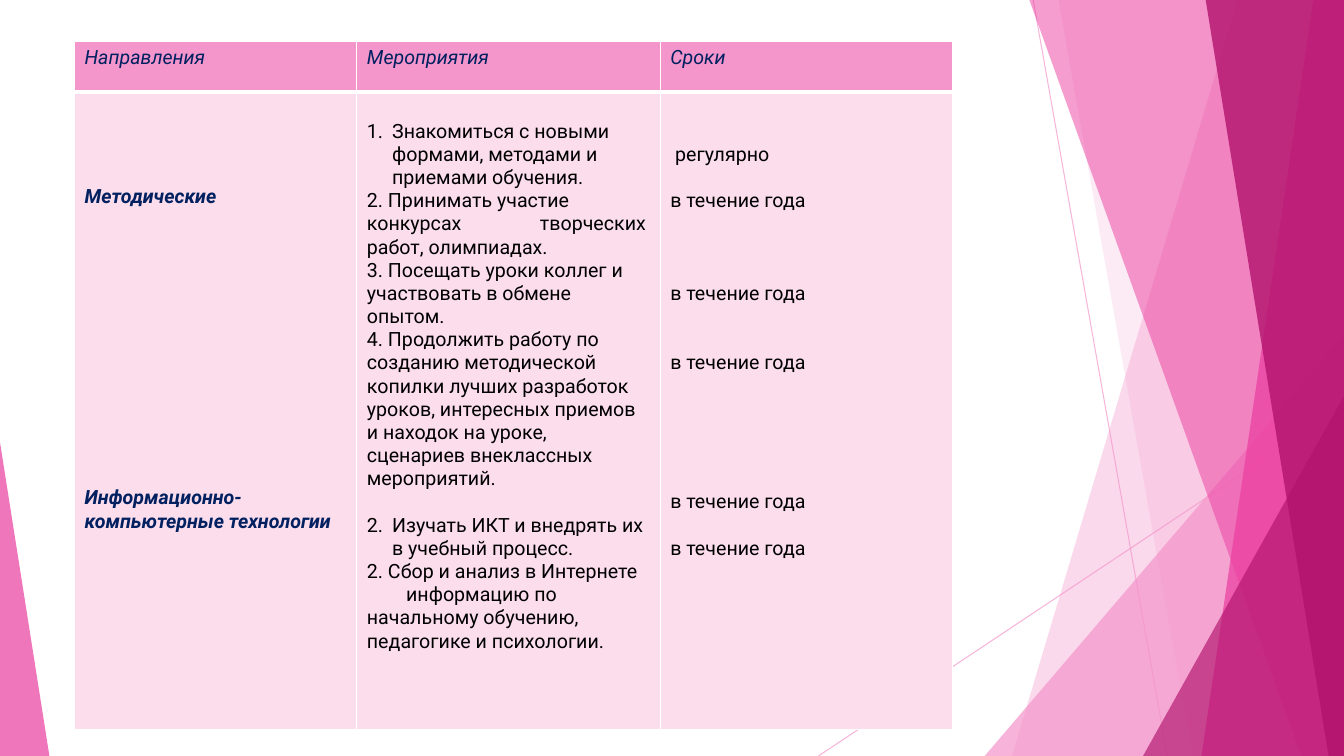
from lxml.etree import SubElement
from pptx import Presentation
from pptx.dml.color import RGBColor
from pptx.enum.shapes import MSO_CONNECTOR as Conn, MSO_SHAPE as Shape
from pptx.oxml.ns import qn
from pptx.util import Pt

WIDTH, HEIGHT = 960, 540
PALE, PINK, HOT, DEEP = "FBDDEC", "F496CB", "EB3D9F", "B2136D"
NAVY, BLACK, WHITE = "002060", "000000", "FFFFFF"
LINE = 16.55  # height of one text line
INSET = 3.6   # upper cell margin


def color(hex_code):
    return RGBColor.from_string(hex_code)


def set_alpha(element, percent):
    clr = element.find(".//" + qn("a:srgbClr"))
    SubElement(clr, qn("a:alpha"), val=str(percent * 1000))


class SlideBuilder:
    font = {"name": "Roboto", "size": Pt(14), "bold": False, "italic": False}

    def __init__(self, s):
        self.s = s

    def line(self, x1, y1, x2, y2):
        c = self.s.shapes.add_connector(
            Conn.STRAIGHT, Pt(x1), Pt(y1), Pt(x2), Pt(y2))
        c.line.width = Pt(0.75)
        c.line.color.rgb = color(PINK)
        set_alpha(c.line._ln, 70)
        SubElement(c._element.spPr, qn("a:effectLst"))

    def paint(self, sp, fill, alpha):
        sp.shadow.inherit = False
        sp.line.fill.background()
        sp.fill.solid()
        sp.fill.fore_color.rgb = color(fill)
        set_alpha(sp._element.spPr, alpha)

    def facet(self, top_x, bottom_x, fill, alpha):
        """Draw a full-height band from a slanted left side to the right edge."""
        top = -0.6
        fb = self.s.shapes.build_freeform(Pt(top_x), Pt(top), scale=1.0)
        corners = [(WIDTH, top), (WIDTH, HEIGHT), (bottom_x, HEIGHT)]
        fb.add_line_segments([(Pt(x), Pt(y)) for x, y in corners], close=True)
        self.paint(fb.convert_to_shape(), fill, alpha)

    def triangle(self, x, y, width, apex, fill, alpha):
        """Draw a right triangle that stands on the lower slide edge."""
        sp = self.s.shapes.add_shape(Shape.ISOSCELES_TRIANGLE, Pt(x), Pt(y),
                                     Pt(width), Pt(HEIGHT - y))
        sp.adjustments[0] = apex
        self.paint(sp, fill, alpha)

    def table(self, x, y, widths, heights):
        frame = self.s.shapes.add_table(
            len(heights), len(widths), Pt(x), Pt(y), Pt(sum(widths)), Pt(sum(heights)))
        table = frame.table
        for column, width in zip(table.columns, widths):
            column.width = Pt(width)
        for row, height in zip(table.rows, heights):
            row.height = Pt(height)
        return table

    def cell(self, cell, fill, top, items, text_color, edges, **style):
        """Fill a cell; items are (text, free lines before it, options)."""
        tcPr = cell._tc.get_or_add_tcPr()
        for side, width in zip("LRTB", edges):
            ln = SubElement(tcPr, qn("a:ln" + side), w=str(Pt(width)))
            SubElement(SubElement(ln, qn("a:solidFill")), qn("a:srgbClr"), val=WHITE)
        cell.fill.solid()
        cell.fill.fore_color.rgb = color(fill)
        cell.margin_top = Pt(top)
        tf = cell.text_frame
        for i, (text, gap, options) in enumerate(items):
            p = tf.paragraphs[0] if i == 0 else tf.add_paragraph()
            p.text = text
            if gap:
                p.space_before = Pt(gap * LINE)
            self.layout(p, **options)
            for r in p.runs:
                for name, value in {**self.font, **style}.items():
                    setattr(r.font, name, value)
                r.font.color.rgb = color(text_color)

    def layout(self, p, number=None, tab=None):
        pPr = p._p.get_or_add_pPr()
        if number:
            pPr.set("marL", str(Pt(18)))
            pPr.set("indent", str(Pt(-18)))
            SubElement(pPr, qn("a:buFont"), typeface="+mj-lt")
            SubElement(pPr, qn("a:buAutoNum"), type="arabicPeriod", startAt=str(number))
        if tab:
            tabs = SubElement(pPr, qn("a:tabLst"))
            SubElement(tabs, qn("a:tab"), pos=str(Pt(tab)), algn="l")
        for br in p._p.findall(qn("a:br")):
            SubElement(br, qn("a:rPr"), sz="1400")


DIRECTIONS = [
    ("Методические", 0, {}),
    ("Информационно- компьютерные технологии", 12, {}),
]
ACTIVITIES = [
    ("Знакомиться с новыми формами, методами и приемами обучения.", 0, {"number": 1}),
    ("2. Принимать участие конкурсах\tтворческих работ, олимпиадах.", 0, {"tab": 123.6}),
    ("3. Посещать уроки коллег и участвовать в обмене опытом.", 0, {}),
    ("4. Продолжить работу по созданию методической копилки лучших разработок "
     "уроков, интересных приемов и находок на уроке, сценариев внеклассных "
     "мероприятий.", 0, {}),
    ("Изучать ИКТ и внедрять их в учебный процесс.", 1, {"number": 2}),
    ("2. Сбор и анализ в Интернете\v\tинформацию по начальному обучению, "
     "педагогике и психологии.", 0, {"tab": 28}),
]
TERMS = [(" регулярно", 0, {})]
TERMS += [("в течение года", gap, {}) for gap in (1, 3, 2, 5, 1)]


def main():
    prs = Presentation()
    prs.slide_width, prs.slide_height = Pt(WIDTH), Pt(HEIGHT)
    b = SlideBuilder(prs.slides.add_slide(prs.slide_layouts[6]))

    b.line(738, 0, 833.8, HEIGHT)
    b.line(WIDTH, 290.2, 584.6, HEIGHT)
    b.facet(884.2, 722.9, PINK, 36)
    b.facet(756, 851.8, PINK, 20)
    b.triangle(703.4, 239.8, 256.6, 1, PINK, 72)
    b.facet(735.1, 929.5, HOT, 50)
    b.facet(938.2, 858.2, HOT, 70)
    b.facet(861.1, 949, DEEP, 80)
    b.triangle(816.5, 283, 143.5, 1, DEEP, 66)
    b.triangle(0, 316, 35.3, 0, HOT, 70)

    plan = b.table(53.3, 29.5, [201.6, 216.7, 208.8], [36, 455.8])
    for i, head in enumerate(["Направления", "Мероприятия", "Сроки"]):
        b.cell(plan.cell(0, i), PINK, INSET, [(head, 0, {})], NAVY,
               (1, 1, 1, 3), italic=True)
    columns = [
        (INSET + 63.3, DIRECTIONS, NAVY, {"bold": True, "italic": True}),
        (INSET + LINE, ACTIVITIES, BLACK, {}),
        (INSET + 2 * LINE, TERMS, BLACK, {}),
    ]
    for i, (top, items, text_color, style) in enumerate(columns):
        b.cell(plan.cell(1, i), PALE, top, items, text_color, (1, 1, 3, 1), **style)

    prs.save("out.pptx")


if __name__ == "__main__":
    main()
